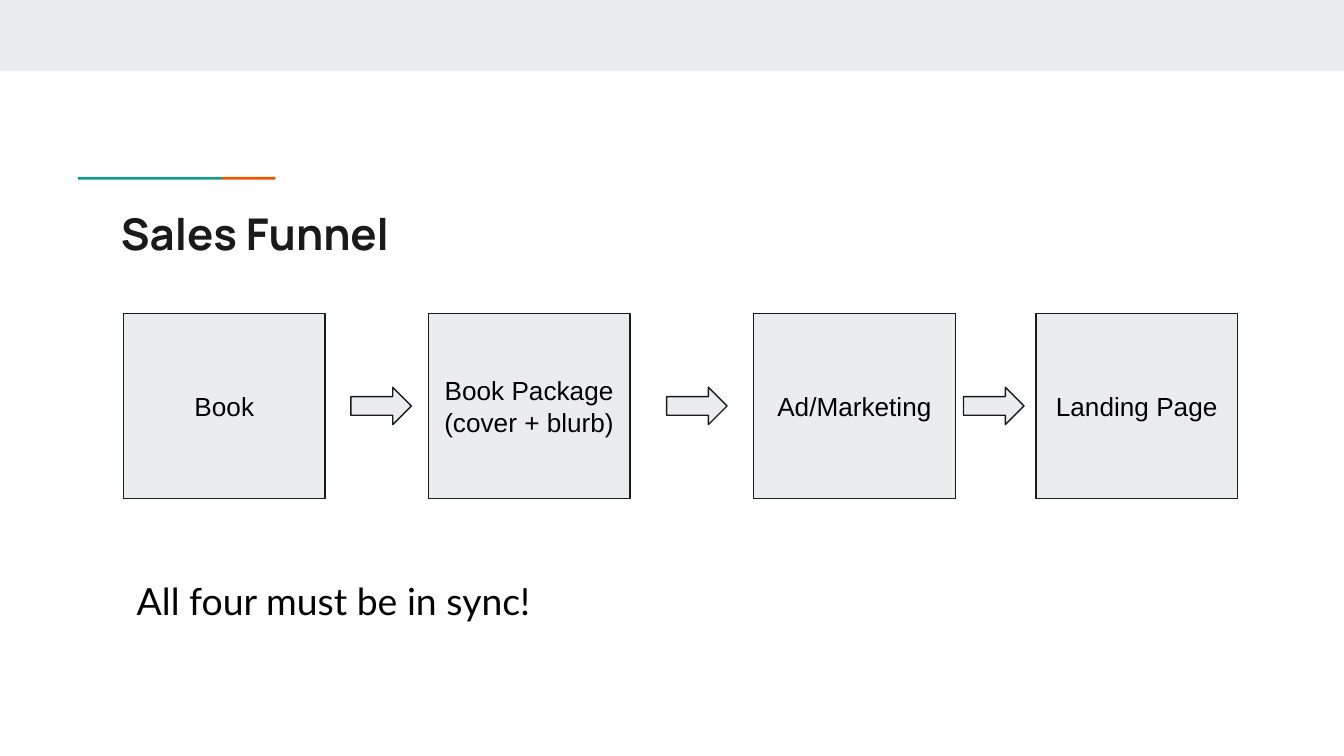
from pptx import Presentation
from pptx.dml.color import RGBColor
from pptx.enum.shapes import MSO_SHAPE
from pptx.enum.text import MSO_ANCHOR, MSO_AUTO_SIZE, PP_ALIGN
from pptx.util import Pt

RECTANGLE, RIGHT_ARROW = MSO_SHAPE.RECTANGLE, MSO_SHAPE.RIGHT_ARROW
TOP, MIDDLE = MSO_ANCHOR.TOP, MSO_ANCHOR.MIDDLE
LEFT, CENTER = PP_ALIGN.LEFT, PP_ALIGN.CENTER
NO_AUTOFIT = MSO_AUTO_SIZE.NONE

# Content: each stage with its left edge, and the left edges of the arrows
TITLE = "Sales Funnel"
STAGES = [
    ("Book", 66.2),
    ("Book Package (cover + blurb)", 229.5),
    ("Ad/Marketing", 403.8),
    ("Landing Page", 555),
]
ARROW_LEFTS = [188, 357.1, 516.2]
MESSAGE = "All four must be in sync!"

THEME = {
    "panel": RGBColor(0xE9, 0xED, 0xEE),
    "teal": RGBColor(0x1A, 0x99, 0x88),
    "orange": RGBColor(0xEB, 0x56, 0x00),
    "ink": RGBColor(0x1A, 0x1A, 0x1A),
    "black": RGBColor(0, 0, 0),
    "title": ("Manrope", 23.4),
    "stage": ("Arial", 14),
    "message": ("Lato", 20),
}

# Layout in points
PAGE_WIDTH, PAGE_HEIGHT = 720, 405
BAND_HEIGHT = 38.2
STAGE_TOP, STAGE_WIDTH, STAGE_HEIGHT = 168, 108, 99
ARROW_WIDTH, ARROW_HEIGHT = 32.4, 20
ACCENT_TOP, ACCENT_HEIGHT = 94.8, 1.5
ACCENTS = [(41.8, 76.7, "teal"), (118.5, 29.1, "orange")]
INSET = 7.2


def add_panel(page, kind, left, top, width, height, fill="panel", outlined=False):
    shape = page.shapes.add_shape(kind, Pt(left), Pt(top), Pt(width), Pt(height))
    shape.shadow.inherit = False
    shape.fill.solid()
    shape.fill.fore_color.rgb = THEME[fill]
    if outlined:
        shape.line.color.rgb = THEME["ink"]
        shape.line.width = Pt(0.75)
    else:
        shape.line.fill.background()
    return shape


def write(box, text, style, color="black", bold=False, align=LEFT, anchor=TOP):
    frame = box.text_frame
    frame.text = text
    frame.word_wrap = True
    frame.auto_size = NO_AUTOFIT
    frame.vertical_anchor = anchor
    frame.margin_left = frame.margin_right = Pt(INSET)
    frame.margin_top = frame.margin_bottom = Pt(INSET)
    para = frame.paragraphs[0]
    para.alignment = align
    para.line_spacing = 1.0
    para.space_before = Pt(0)
    font_name, size = THEME[style]
    para.font.name = font_name
    para.font.size = Pt(size)
    para.font.bold = bold
    para.font.color.rgb = THEME[color]


def main():
    deck = Presentation()
    deck.slide_width, deck.slide_height = Pt(PAGE_WIDTH), Pt(PAGE_HEIGHT)
    page = deck.slides.add_slide(deck.slide_layouts[5])

    # Top band and accent rule
    add_panel(page, RECTANGLE, 0, 0, PAGE_WIDTH, BAND_HEIGHT)
    for left, width, color in ACCENTS:
        add_panel(page, RECTANGLE, left, ACCENT_TOP, width, ACCENT_HEIGHT, color)

    # Title
    title = page.shapes.title
    title.left, title.top = Pt(57.6), Pt(103.7)
    title.width, title.height = Pt(605.5), Pt(42.5)
    write(title, TITLE, "title", color="ink", bold=True)

    # Funnel stages
    for label, left in STAGES:
        box = add_panel(page, RECTANGLE, left, STAGE_TOP, STAGE_WIDTH,
                        STAGE_HEIGHT, outlined=True)
        write(box, label, "stage", align=CENTER, anchor=MIDDLE)

    # Arrows, centred on the stages
    arrow_top = STAGE_TOP + (STAGE_HEIGHT - ARROW_HEIGHT) / 2
    for left in ARROW_LEFTS:
        add_panel(page, RIGHT_ARROW, left, arrow_top, ARROW_WIDTH,
                  ARROW_HEIGHT, outlined=True)

    # Closing message
    message = page.shapes.add_textbox(Pt(66.2), Pt(302.4), Pt(580.3), Pt(68.4))
    write(message, MESSAGE, "message")

    deck.save("out.pptx")


if __name__ == "__main__":
    main()
